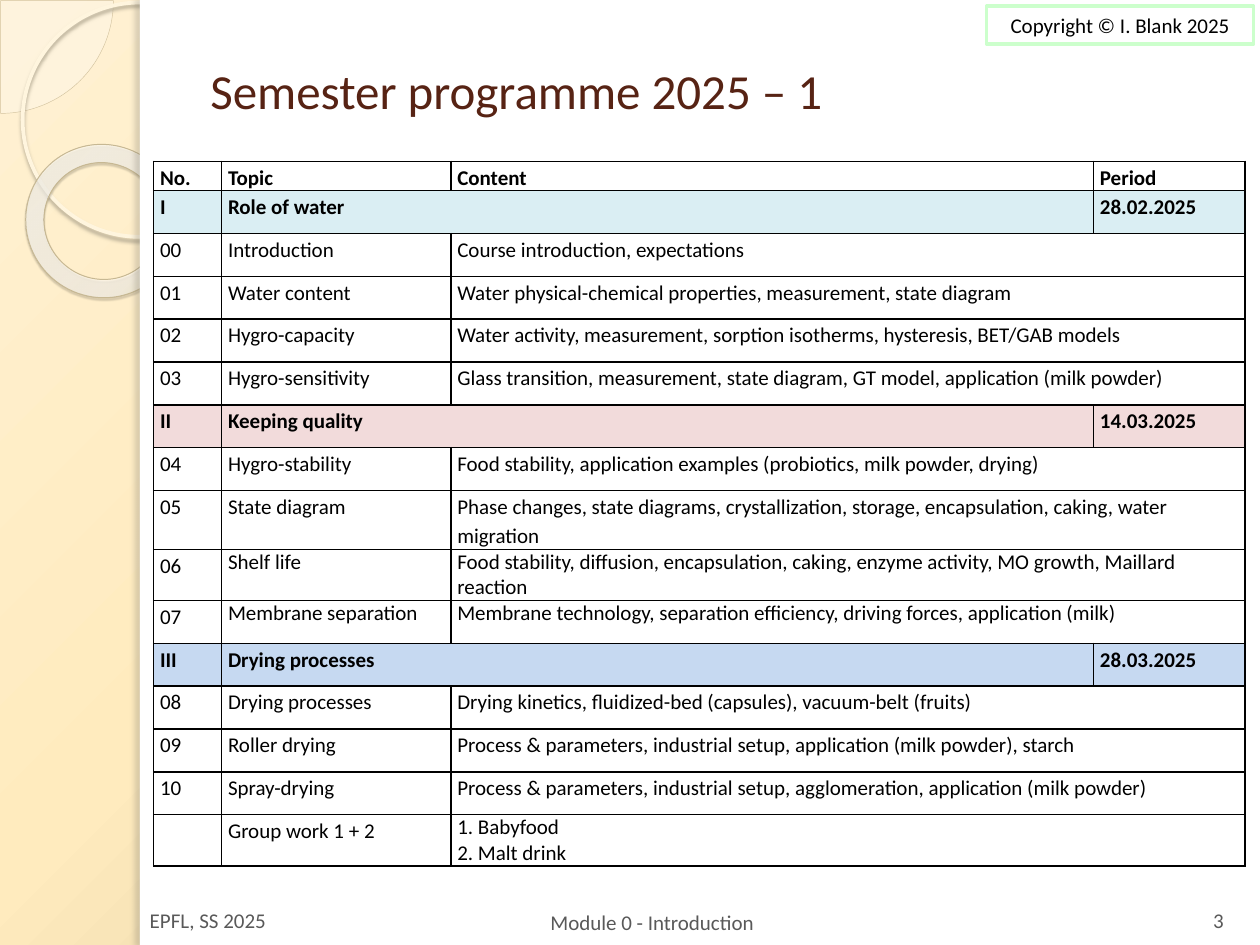
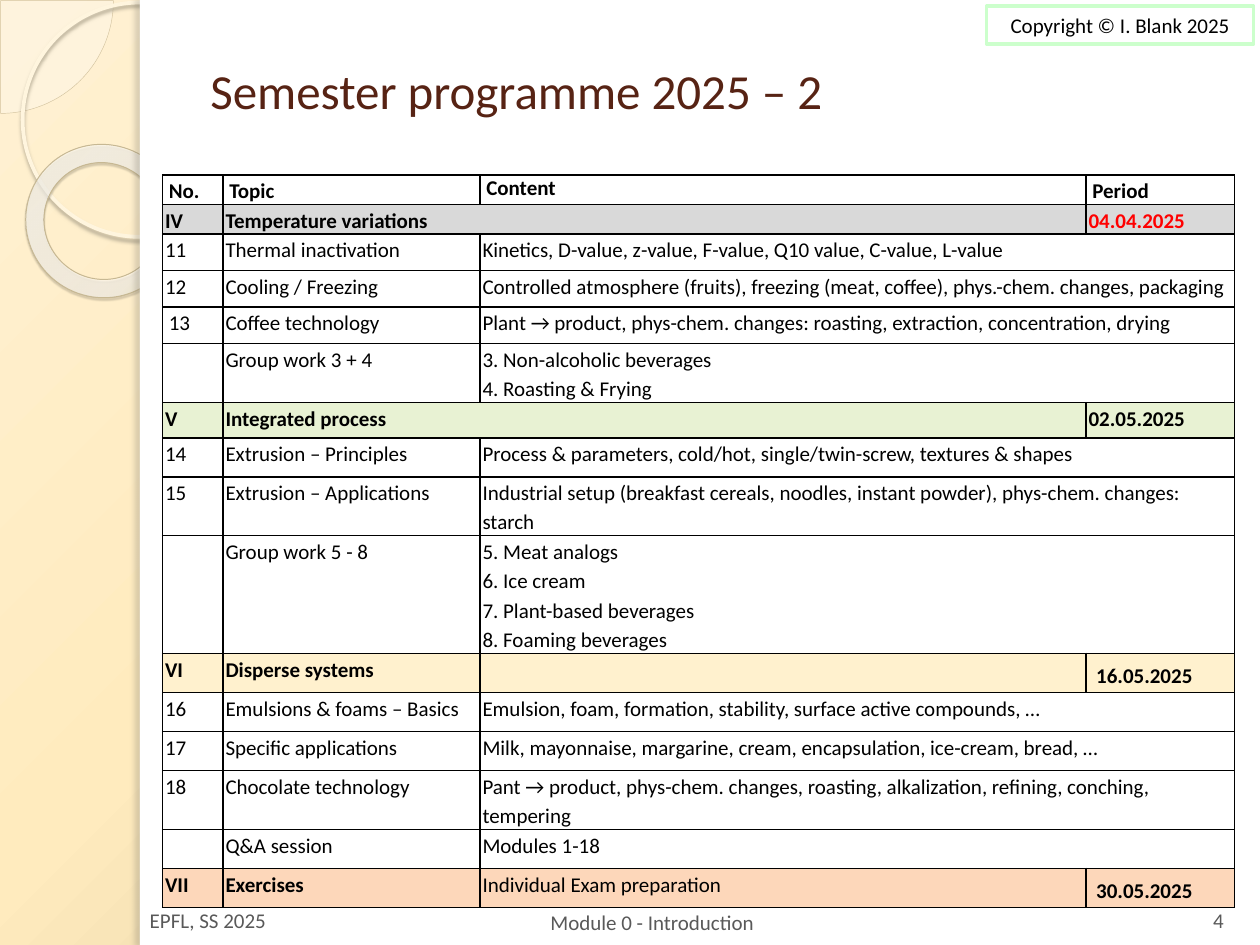
"""Build the two semester programme slides."""
import lxml.etree
import pptx
import pptx.dml.color
import pptx.enum.shapes
import pptx.enum.text
import pptx.oxml.ns
import pptx.util

Inches = pptx.util.Inches
Pt = pptx.util.Pt
SHAPE = pptx.enum.shapes.MSO_SHAPE
ALIGN = pptx.enum.text.PP_ALIGN
ANCHOR = pptx.enum.text.MSO_ANCHOR
qn = pptx.oxml.ns.qn

FONT = "Calibri"
COLOURS = {
    "black": "000000", "white": "FFFFFF", "red": "FF0000", "title": "572314",
    "footer": "595959", "badge": "CCFFCC", "pie": "FEFAF4", "pie edge": "D3C39F",
    "circle": "FFF5DE", "circle shadow": "B0A68F", "ring edge": "C7B893",
    "ring shadow": "5A5444", "band shadow": "736F63",
    "water": "DAEEF3", "keeping": "F2DBDB", "drying": "C6D9F1",
    "temperature": "D9D9D9", "integrated": "E8F2D3", "disperse": "FFF1CE",
    "exercises": "FDD7BA",
}
BACKGROUND_STOPS = [(0, "FFF1D3", 100), (40, "FFEBBE", 100), (100, "C9B484", 100)]
RING_STOPS = [(0, "FFFCF6", 70), (70, "FFFEFB", 55), (100, "F0D28E", 60)]

HEADER = ("No.", "Topic", "Content", "Period")
PROGRAMMES = [
    {
        "title": "Semester programme 2025 – 1",
        "number": "3",
        "place": (1.22, 1.28),
        "columns": [0.54, 1.82, 5.1, 1.2],
        "heights": [0.23] + [0.34] * 15,
        "inset": 0.05,
        "tight": {(9, 1), (9, 2), (10, 1), (10, 2), (15, 2)},
        "nudges": {},
        "rows": [
            ("I", "Role of water", None, "28.02.2025", "water"),
            ("00", "Introduction", "Course introduction, expectations"),
            ("01", "Water content",
             "Water physical-chemical properties, measurement, state diagram"),
            ("02", "Hygro-capacity",
             "Water activity, measurement, sorption isotherms, hysteresis, BET/GAB models"),
            ("03", "Hygro-sensitivity",
             "Glass transition, measurement, state diagram, GT model, application (milk powder)"),
            ("II", "Keeping quality", None, "14.03.2025", "keeping"),
            ("04", "Hygro-stability",
             "Food stability, application examples (probiotics, milk powder, drying)"),
            ("05", "State diagram",
             "Phase changes, state diagrams, crystallization, storage, encapsulation, "
             "caking, water migration"),
            ("06", "Shelf life",
             "Food stability, diffusion, encapsulation, caking, enzyme activity, "
             "MO growth, Maillard reaction"),
            ("07", "Membrane separation",
             "Membrane technology, separation efficiency, driving forces, application (milk)"),
            ("III", "Drying processes", None, "28.03.2025", "drying"),
            ("08", "Drying processes",
             "Drying kinetics, fluidized-bed (capsules), vacuum-belt (fruits)"),
            ("09", "Roller drying",
             "Process & parameters, industrial setup, application (milk powder), starch"),
            ("10", "Spray-drying",
             "Process & parameters, industrial setup, agglomeration, application (milk powder)"),
            ("", "Group work 1 + 2", "1. Babyfood\n2. Malt drink"),
        ],
    },
    {
        "title": "Semester programme 2025 – 2",
        "number": "4",
        "place": (1.29, 1.39),
        "columns": [0.48, 2.04, 4.81, 1.18],
        "heights": [0.23] * 2 + [0.29] * 4 + [0.28] + [0.31] * 9,
        "inset": 0.02,
        "tight": {(0, 2)},
        "nudges": {(4, 0): (0.05, 0), (10, 3): (0.08, 0.05), (15, 3): (0.08, 0.05)},
        "rows": [
            ("IV", "Temperature variations", None, "04.04.2025", "temperature", "red"),
            ("11", "Thermal inactivation",
             "Kinetics, D-value, z-value, F-value, Q10 value, C-value, L-value"),
            ("12", "Cooling / Freezing",
             "Controlled atmosphere (fruits), freezing (meat, coffee), "
             "phys.-chem. changes, packaging"),
            ("13", "Coffee technology",
             "Plant → product, phys-chem. changes: roasting, extraction, concentration, drying"),
            ("", "Group work 3 + 4", "3. Non-alcoholic beverages\n4. Roasting & Frying"),
            ("V", "Integrated process", None, "02.05.2025", "integrated"),
            ("14", "Extrusion – Principles",
             "Process & parameters, cold/hot, single/twin-screw, textures & shapes"),
            ("15", "Extrusion – Applications",
             "Industrial setup (breakfast cereals, noodles, instant powder), "
             "phys-chem. changes: starch"),
            ("", "Group work 5 - 8",
             "5. Meat analogs\n6. Ice cream\n7. Plant-based beverages\n8. Foaming beverages"),
            ("VI", "Disperse systems", "", "16.05.2025", "disperse"),
            ("16", "Emulsions & foams – Basics",
             "Emulsion, foam, formation, stability, surface active compounds, …"),
            ("17", "Specific applications",
             "Milk, mayonnaise, margarine, cream, encapsulation, ice-cream, bread, …"),
            ("18", "Chocolate technology",
             "Pant → product, phys-chem. changes, roasting, alkalization, refining, "
             "conching, tempering"),
            ("", "Q&A session", "Modules 1-18"),
            ("VII", "Exercises", "Individual Exam preparation", "30.05.2025", "exercises"),
        ],
    },
]


def rgb(name):
    return pptx.dml.color.RGBColor.from_string(COLOURS[name])


def write(frame, text, size=12, colour="black", bold=False, align=ALIGN.LEFT, spacing=1.0):
    for index, line in enumerate(text.split("\n")):
        para = frame.add_paragraph() if index else frame.paragraphs[0]
        para.alignment = align
        para.line_spacing = spacing
        span = para.add_run()
        span.text = line
        span.font.name = FONT
        span.font.size = Pt(size)
        span.font.bold = bold
        span.font.color.rgb = rgb(colour)


def add_child(parent, tag, **attributes):
    child = lxml.etree.SubElement(parent, qn(tag))
    for name, value in attributes.items():
        child.set(name, str(value))
    return child


def add_colour(parent, value, opacity):
    colour = add_child(parent, "a:srgbClr", val=value)
    if opacity < 100:
        add_child(colour, "a:alpha", val=opacity * 1000)


def set_radial(fill, element, stops, focus):
    fill.gradient()
    gradient = next(element.iter(qn("a:gradFill")))
    for child in list(gradient):
        gradient.remove(child)
    stop_list = add_child(gradient, "a:gsLst")
    for position, value, opacity in stops:
        add_colour(add_child(stop_list, "a:gs", pos=position * 1000), value, opacity)
    circle = add_child(gradient, "a:path", path="circle")
    edges = {side: share * 1000 for side, share in zip("ltrb", focus)}
    add_child(circle, "a:fillToRect", **edges)


def add_shadow(shape, colour, opacity, blur, distance, angle):
    effects = shape.element.spPr.find(qn("a:effectLst"))
    shadow = add_child(effects, "a:outerShdw", blurRad=Pt(blur), dist=Pt(distance),
                       dir=angle * 60000, algn="tl", rotWithShape=0)
    add_colour(shadow, COLOURS[colour], opacity)


def add_shape(page, kind, place, fill=None, line=None, width=1.0):
    shape = page.shapes.add_shape(kind, *map(Inches, place))
    shape.shadow.inherit = False
    if fill:
        shape.fill.solid()
        shape.fill.fore_color.rgb = rgb(fill)
    else:
        shape.fill.background()
    if line:
        shape.line.color.rgb = rgb(line)
        shape.line.width = Pt(width)
    else:
        shape.line.fill.background()
    return shape


def add_decoration(page):
    pie = add_shape(page, SHAPE.PIE, (-0.89, -0.89, 1.79, 1.79), "pie", "pie edge", 0.25)
    pie.adjustments[0] = 0
    pie.adjustments[1] = 54.02
    add_child(next(pie.element.spPr.iter(qn("a:srgbClr"))), "a:alpha", val=33000)
    circle = add_shape(page, SHAPE.OVAL, (0.18, 0.02, 1.86, 1.86), None, "circle", 2.15)
    add_shadow(circle, "circle shadow", 85, 2, 2, 90)
    ring = add_shape(page, SHAPE.DONUT, (0.2, 1.15, 1.23, 1.21), None, "ring edge", 0.58)
    ring.adjustments[0] = 0.12
    ring.rotation = 38.6
    set_radial(ring.fill, ring.element.spPr, RING_STOPS, (-408, -50, 508, 150))
    add_shadow(ring, "ring shadow", 35, 1, 1.2, 75)
    add_shape(page, SHAPE.RECTANGLE, (1.11, 0, 8.89, 7.5), "white")
    band = add_shape(page, SHAPE.RECTANGLE, (1.11, 0, 0.08, 7.5), "white")
    add_shadow(band, "band shadow", 25, 3, 3, 180)
    badge = add_shape(page, SHAPE.RECTANGLE, (7.83, 0.05, 2.12, 0.3), None, "badge", 2)
    write(badge.text_frame, "Copyright © I. Blank 2025", align=ALIGN.CENTER)


def add_footer(page, text, place, anchor, align=ALIGN.LEFT):
    frame = page.shapes.add_textbox(*map(Inches, place)).text_frame
    frame.word_wrap = True
    frame.vertical_anchor = anchor
    write(frame, text, colour="footer", align=align)


def add_title(page, text):
    title = page.shapes.title
    title.left, title.top, title.width, title.height = map(Inches, (1.57, 0.3, 8.2, 1.25))
    frame = title.text_frame
    frame.auto_size = pptx.enum.text.MSO_AUTO_SIZE.NONE
    frame.vertical_anchor = ANCHOR.MIDDLE
    frame.margin_bottom = Inches(0.47)
    write(frame, text, size=28, colour="title")


def add_borders(cell):
    properties = cell._tc.get_or_add_tcPr()
    for index, side in enumerate("LRTB"):
        border = add_child(properties, "a:ln" + side, w=Pt(1))
        add_colour(add_child(border, "a:solidFill"), COLOURS["black"], 100)
        properties.insert(index, border)


def format_cell(cell, fill, inset, top):
    cell.margin_left = cell.margin_right = Inches(inset)
    cell.margin_top, cell.margin_bottom = Inches(top), 0
    if fill:
        cell.fill.solid()
        cell.fill.fore_color.rgb = rgb(fill)
    else:
        cell.fill.background()
    add_borders(cell)


def add_programme(page, programme):
    rows = [HEADER] + programme["rows"]
    columns, heights = programme["columns"], programme["heights"]
    size = (sum(columns), sum(heights))
    frame = page.shapes.add_table(len(rows), len(columns),
                                  *map(Inches, programme["place"] + size))
    table = frame.table
    table.first_row = table.horz_banding = False
    for column, width in zip(table.columns, columns):
        column.width = Inches(width)
    for row, height in zip(table.rows, heights):
        row.height = Inches(height)
    for r, row in enumerate(rows):
        number, topic, content, period, fill, date_colour = row + (None,) * (6 - len(row))
        if period is None:
            table.cell(r, 2).merge(table.cell(r, 3))
        elif content is None:
            table.cell(r, 1).merge(table.cell(r, 2))
        inset = programme["inset"] if r else 0.05
        for c, text in enumerate((number, topic, content, period)):
            cell = table.cell(r, c)
            format_cell(cell, fill, *programme["nudges"].get((r, c), (inset, 0)))
            if text is not None:
                write(cell.text_frame, text,
                      colour=date_colour if date_colour and c == 3 else "black",
                      bold=period is not None and not (fill and c == 2),
                      spacing=1.0 if (r, c) in programme["tight"] else 1.15)


def main():
    deck = pptx.Presentation()
    deck.slide_width, deck.slide_height = Inches(10), Inches(7.5)
    master = deck.slide_master
    set_radial(master.background.fill, master.element, BACKGROUND_STOPS, (-24, -20, 124, 120))
    for programme in PROGRAMMES:
        page = deck.slides.add_slide(deck.slide_layouts.get_by_name("Title Only"))
        add_decoration(page)
        add_footer(page, "EPFL, SS 2025", (1.09, 7.09, 2.33, 0.36), ANCHOR.BOTTOM)
        add_footer(page, programme["number"], (9.42, 7.09, 0.5, 0.36), ANCHOR.BOTTOM,
                   ALIGN.CENTER)
        add_footer(page, "Module 0 - Introduction", (4.27, 7.14, 3.17, 0.36), ANCHOR.MIDDLE)
        add_title(page, programme["title"])
        page.shapes._spTree.append(page.shapes.title.element)
        add_programme(page, programme)
    deck.save("out.pptx")


if __name__ == "__main__":
    main()
